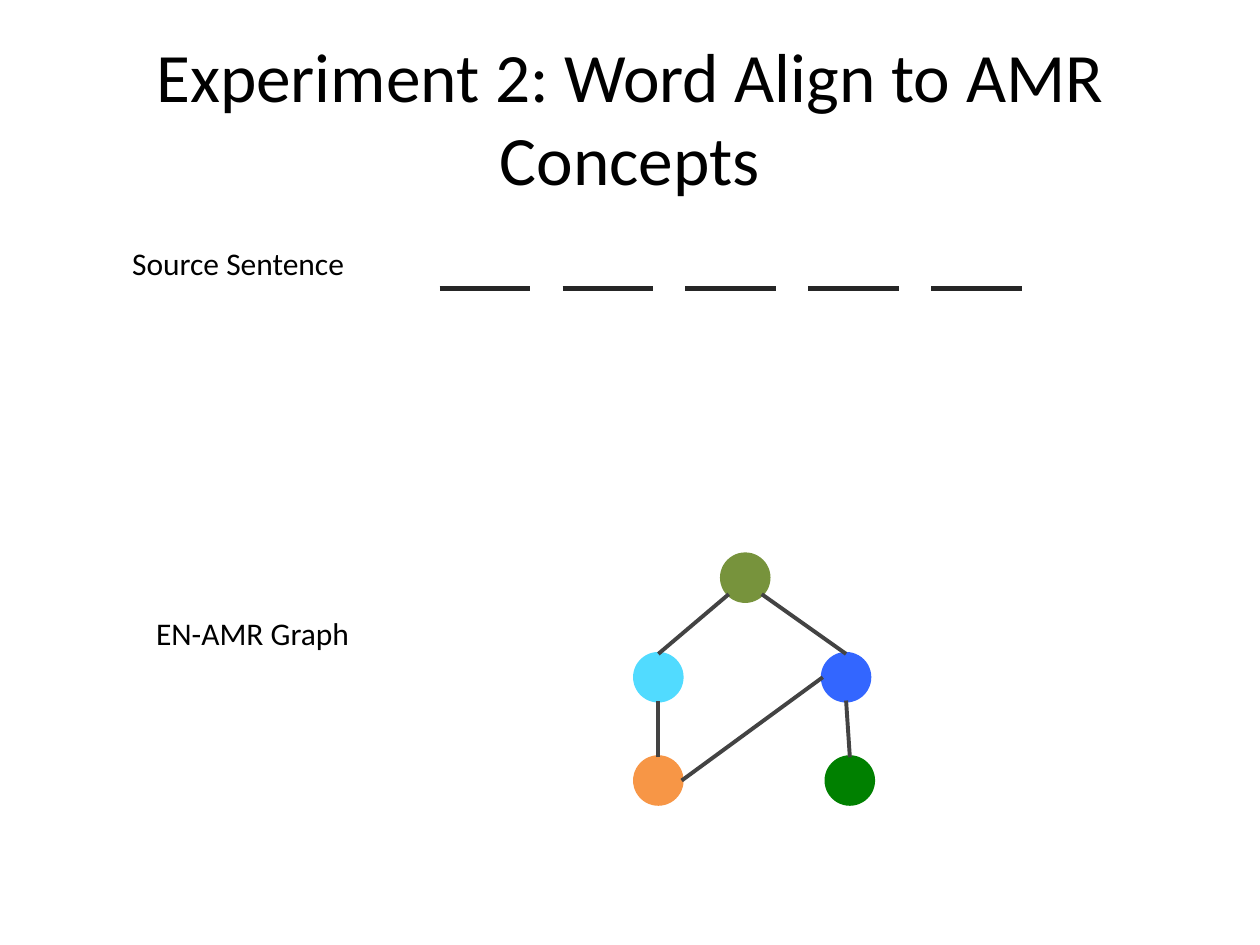
from dataclasses import dataclass
from math import cos, radians, sin

from lxml import etree
from pptx import Presentation
from pptx.dml.color import RGBColor
from pptx.enum import shapes, text
from pptx.oxml import ns
from pptx.util import Inches, Pt


@dataclass(frozen=True)
class Theme:
    font: str = "Calibri"
    title: float = 39.6
    label: float = 18
    ink: str = "000000"
    blank: str = "262626"
    edge: str = "434343"
    root: str = "77933C"
    left: str = "51DBFF"
    right: str = "3366FF"
    leaf: str = "F79646"
    tip: str = "008000"


def write(frame, words, size, theme, align=text.PP_ALIGN.LEFT,
          anchor=text.MSO_ANCHOR.TOP, pad=0.1):
    frame.word_wrap = True
    frame.vertical_anchor = anchor
    frame.margin_left = frame.margin_right = Inches(0.1)
    frame.margin_top = frame.margin_bottom = Inches(pad)
    para = frame.paragraphs[0]
    para.alignment = align
    run = para.add_run()
    run.text = words
    run.font.name = theme.font
    run.font.size = Pt(size)
    run.font.color.rgb = RGBColor.from_string(theme.ink)


class Canvas:
    def __init__(self, slide, theme):
        self.slide = slide
        self.theme = theme

    def label(self, box, words, size, **style):
        shape = self.slide.shapes.add_textbox(*map(Inches, box))
        write(shape.text_frame, words, size, self.theme, **style)

    def line(self, start, end, color, width):
        link = self.slide.shapes.add_connector(
            shapes.MSO_CONNECTOR.STRAIGHT, *map(Inches, (*start, *end)))
        link.line.color.rgb = RGBColor.from_string(color)
        link.line.width = Pt(width)
        etree.SubElement(link._element.spPr, ns.qn("a:effectLst"))

    def node(self, spot, color):
        dot = self.slide.shapes.add_shape(
            shapes.MSO_SHAPE.OVAL, *map(Inches, (*spot, SIZE, SIZE)))
        dot.shadow.inherit = False
        dot.fill.solid()
        dot.fill.fore_color.rgb = RGBColor.from_string(color)
        dot.line.color.rgb = RGBColor.from_string(color)
        dot.line.width = Pt(2.25)


SIZE = 0.37
EAST, SOUTHEAST, SOUTH, SOUTHWEST, WEST, NORTH = 0, 45, 90, 135, 180, 270
NODES = {
    "left": (5.04, 5.19),
    "root": (5.73, 4.4),
    "leaf": (5.04, 6.01),
    "right": (6.53, 5.19),
    "tip": (6.56, 6.01),
}
EDGES = [
    ("left", NORTH, "root", SOUTHWEST),
    ("leaf", NORTH, "left", SOUTH),
    ("root", SOUTHEAST, "right", NORTH),
    ("tip", NORTH, "right", SOUTH),
    ("right", WEST, "leaf", EAST),
]


def rim(name, angle):
    x, y = NODES[name]
    half = SIZE / 2
    turn = radians(angle)
    return x + half * (1 + cos(turn)), y + half * (1 + sin(turn))


def main():
    deck = Presentation()
    deck.slide_width, deck.slide_height = Inches(10), Inches(7.5)
    theme = Theme()
    page = Canvas(deck.slides.add_slide(deck.slide_layouts[6]), theme)

    page.label((0.5, 0.3, 9, 1.25), "Experiment 2: Word Align to AMR Concepts",
               theme.title, align=text.PP_ALIGN.CENTER,
               anchor=text.MSO_ANCHOR.MIDDLE, pad=0.05)
    page.label((0.95, 1.84, 2.05, 0.69), "Source Sentence", theme.label)
    page.label((1.14, 4.77, 2.29, 0.9), "EN-AMR Graph", theme.label)

    for i in range(5):
        x = 3.49 + 0.975 * i
        page.line((x, 2.29), (x + 0.72, 2.29), theme.blank, 3)

    for name, spot in NODES.items():
        page.node(spot, getattr(theme, name))
    for tail, out, head, into in EDGES:
        page.line(rim(tail, out), rim(head, into), theme.edge, 2.25)

    deck.save("out.pptx")


if __name__ == "__main__":
    main()
